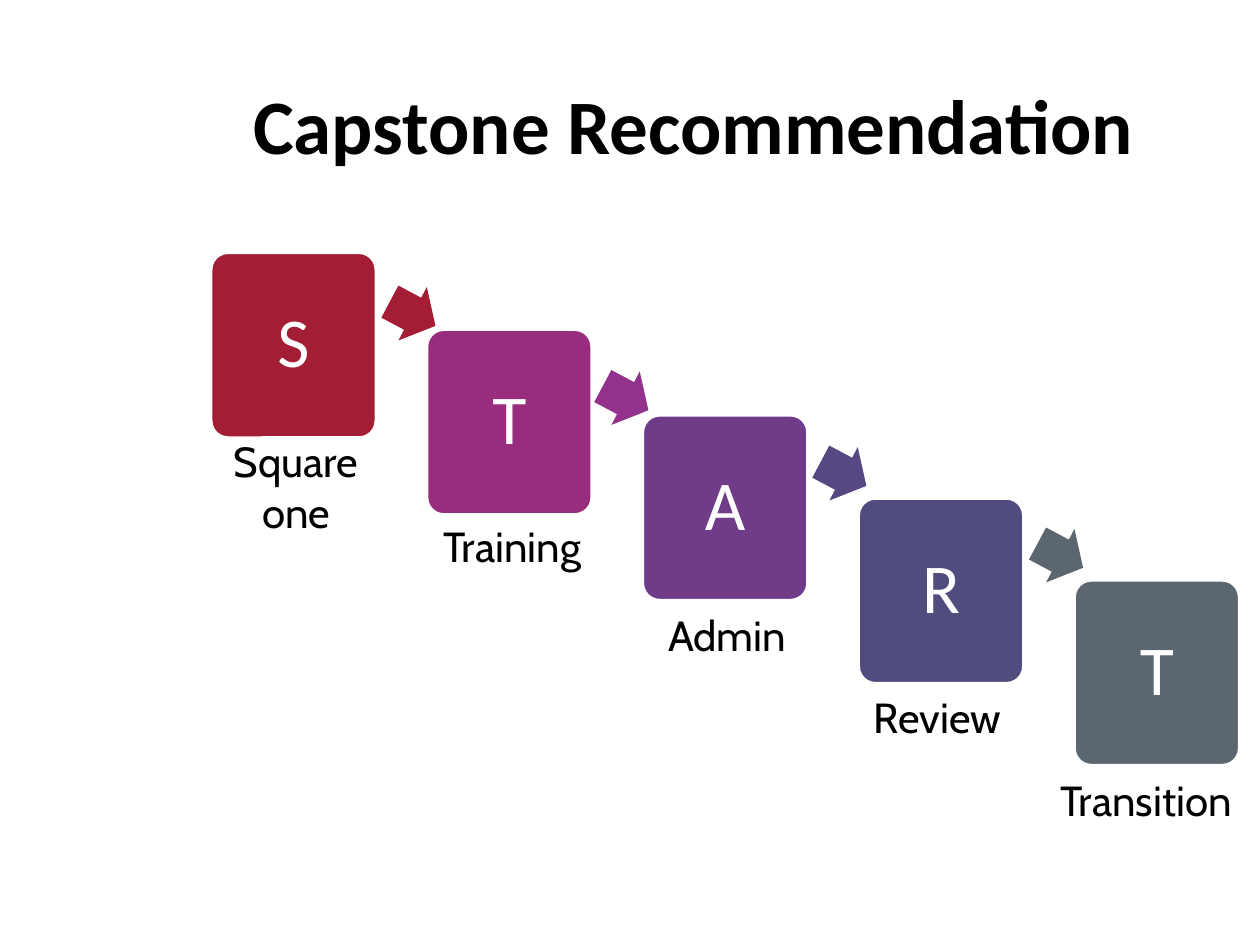
"""Builds the START staircase slide."""
from dataclasses import dataclass

from pptx import Presentation
from pptx.dml.color import RGBColor
from pptx.enum.shapes import MSO_SHAPE
from pptx.enum.text import MSO_ANCHOR, PP_ALIGN
from pptx.util import Inches, Pt

ROUND, ARROW = MSO_SHAPE.ROUNDED_RECTANGLE, MSO_SHAPE.RIGHT_ARROW
LEFT, CENTER = PP_ALIGN.LEFT, PP_ALIGN.CENTER
TOP, MIDDLE = MSO_ANCHOR.TOP, MSO_ANCHOR.MIDDLE
COLS, ROWS = 100, 75


@dataclass(frozen=True)
class Theme:
    ink: str = "000000"
    paper: str = "FFFFFF"
    cards: tuple = ("A31E34", "972D7C", "703C8A", "504C7D", "5C6670")
    arrows: tuple = ("A31E34", "93328D", "574782", "5C6670")
    head: str = "Calibri"
    body: str = "Cabin"
    title: int = 44
    letter: int = 40
    label: int = 24


class Board:
    def __init__(self, deck, theme):
        self.theme = theme
        self.slide = deck.slides.add_slide(deck.slide_layouts[6])
        self.col = deck.slide_width / COLS
        self.row = deck.slide_height / ROWS

    def place(self, x, y, w, h):
        return (round(x * self.col), round(y * self.row),
                round(w * self.col), round(h * self.row))

    def letter(self, shape, text, face, size, color, align=CENTER,
               anchor=MIDDLE, bold=False, space=1.0):
        frame = shape.text_frame
        frame.word_wrap = True
        frame.vertical_anchor = anchor
        para = frame.paragraphs[0]
        para.text = text
        para.alignment = align
        para.line_spacing = space
        font = para.font
        font.name, font.size, font.bold = face, Pt(size), bold
        font.color.rgb = RGBColor.from_string(color)

    def form(self, kind, box, fill):
        shape = self.slide.shapes.add_shape(kind, *self.place(*box))
        shape.shadow.inherit = False
        shape.fill.solid()
        shape.fill.fore_color.rgb = RGBColor.from_string(fill)
        shape.line.fill.background()
        return shape

    def title(self, text, box):
        shape = self.slide.shapes.add_textbox(*self.place(*box))
        self.letter(shape, text, self.theme.head, self.theme.title,
                    self.theme.ink, align=LEFT, bold=True, space=0.9)

    def label(self, text, box):
        shape = self.slide.shapes.add_textbox(*self.place(*box))
        self.letter(shape, text, self.theme.body, self.theme.label,
                    self.theme.ink, anchor=TOP)

    def card(self, text, box, fill):
        shape = self.form(ROUND, box, fill)
        shape.adjustments[0] = 0.1
        shape.line.color.rgb = RGBColor.from_string(self.theme.paper)
        shape.line.width = Pt(1)
        self.letter(shape, text, self.theme.head, self.theme.letter,
                    self.theme.paper, space=0.9)

    def arrow(self, box, fill):
        shape = self.form(ARROW, box, fill)
        shape.adjustments[0] = 0.6
        shape.adjustments[1] = 0.5
        shape.rotation = 28


def main():
    deck = Presentation()
    deck.slide_width, deck.slide_height = Inches(10), Inches(7.5)
    theme = Theme()
    board = Board(deck, theme)
    board.title("Capstone Recommendation", (19.1, 3, 75.2, 14.5))

    steps = (
        ("S", 20.1, "Square one", (16.8, 34.1, 13.4, 9.1)),
        ("T", 26.2, "Training", (33, 40.8, 15.3, 5)),
        ("A", 33, "Admin", (51.2, 47.9, 13, 5)),
        ("R", 39.6, "Review", (67.6, 54.4, 13.6, 5)),
        ("T", 46.1, "Transition", (81.9, 61, 18.1, 5)),
    )
    for i, (mark, top, word, box) in enumerate(steps):
        board.label(word, box)
        board.card(mark, (16.8 + 17.13 * i, top, 13, 14.6), theme.cards[i])

    spots = ((30.7, 22.5), (47.6, 29.2), (64.9, 35.2), (82.1, 41.7))
    for (x, y), fill in zip(spots, theme.arrows):
        board.arrow((x, y, 4.1, 4.8), fill)

    deck.save("out.pptx")


if __name__ == "__main__":
    main()
